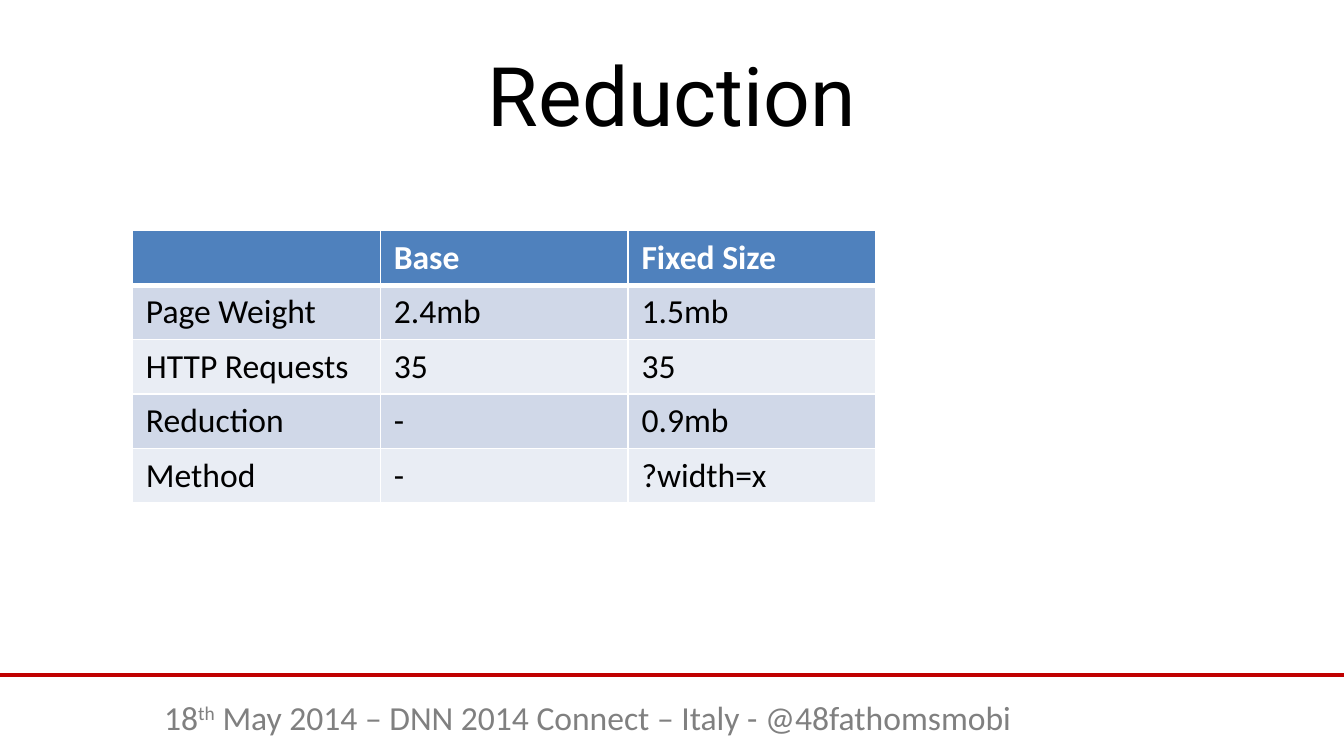
from pptx import Presentation
from pptx import util as u
from pptx.dml.color import RGBColor
from pptx.enum import shapes, text
from pptx.oxml import parse_xml
from pptx.oxml.ns import nsdecls

TITLE = "Reduction"
RESULTS = [
    ("", "Base", "Fixed Size"),
    ("Page Weight", "2.4mb", "1.5mb"),
    ("HTTP Requests", "35", "35"),
    ("Reduction", "-", "0.9mb"),
    ("Method", "-", "?width=x"),
]
FOOTER = [("18", False), ("th", True),
          (" May 2014 – DNN 2014 Connect – Italy - @48fathomsmobi", False)]

THEME = {
    "title_font": "Roboto", "body_font": "Calibri",
    "title_size": 44, "body_size": 18,
    "ink": "000000", "paper": "FFFFFF", "muted": "808080", "rule": "C00000",
    "header": "4F81BD", "bands": ("D0D8E8", "E9EDF4"),
}
SLIDE_W, SLIDE_H = 720, 405
RULE_Y = 361.5
TABLE_LEFT, TABLE_TOP = 71, 123.5
COLUMN_W, ROW_H = 132.75, 29.2


def style(font, face, size, color, bold=False):
    font.name, font.size, font.bold = face, u.Pt(size), bold
    font.color.rgb = RGBColor.from_string(color)


def add_centred_box(slide, left, top, width, height):
    """Add a wrapping text box; return its frame and centred first paragraph."""
    frame = slide.shapes.add_textbox(*map(u.Pt, (left, top, width, height))).text_frame
    frame.word_wrap = True
    line = frame.paragraphs[0]
    line.alignment = text.PP_ALIGN.CENTER
    return frame, line


def add_footer(slide):
    rule = slide.shapes.add_connector(
        shapes.MSO_CONNECTOR.STRAIGHT, 0, u.Pt(RULE_Y), u.Pt(SLIDE_W), u.Pt(RULE_Y))
    rule.line.color.rgb = RGBColor.from_string(THEME["rule"])
    rule.line.width = u.Pt(2)
    rule._element.spPr.append(parse_xml(f"<a:effectLst {nsdecls('a')}/>"))

    _, line = add_centred_box(slide, 65.5, 370, 499, 29)
    for words, raised in FOOTER:
        run = line.add_run()
        run.text = words
        style(run.font, THEME["body_font"], THEME["body_size"], THEME["muted"])
        if raised:
            run._r.get_or_add_rPr().set("baseline", "30000")


def add_title(slide):
    frame, line = add_centred_box(slide, 36, 16.5, 648, 67.5)
    frame.vertical_anchor = text.MSO_ANCHOR.MIDDLE
    line.text = TITLE
    style(line.runs[0].font, THEME["title_font"], THEME["title_size"], THEME["ink"])


def add_borders(cell, widths):
    for side, width in widths.items():
        cell._tc.get_or_add_tcPr().append(parse_xml(
            f'<a:ln{side} {nsdecls("a")} w="{u.Pt(width)}"><a:solidFill>'
            f'<a:srgbClr val="{THEME["paper"]}"/></a:solidFill></a:ln{side}>'))


def add_results(slide):
    rows, columns = len(RESULTS), len(RESULTS[0])
    table = slide.shapes.add_table(
        rows, columns, u.Pt(TABLE_LEFT), u.Pt(TABLE_TOP),
        u.Pt(COLUMN_W * columns), u.Pt(ROW_H * rows)).table
    for r, values in enumerate(RESULTS):
        heading = r == 0
        fill = THEME["header"] if heading else THEME["bands"][(r - 1) % 2]
        color = THEME["paper"] if heading else THEME["ink"]
        borders = {"L": 1, "R": 1, "T": 3 if r == 1 else 1, "B": 3 if heading else 1}
        for c, value in enumerate(values):
            cell = table.cell(r, c)
            add_borders(cell, borders)
            cell.fill.solid()
            cell.fill.fore_color.rgb = RGBColor.from_string(fill)
            cell.text = value
            style(cell.text_frame.paragraphs[0].font, THEME["body_font"],
                  THEME["body_size"], color, heading)
            for run in cell.text_frame.paragraphs[0].runs:
                style(run.font, THEME["body_font"], THEME["body_size"], color, heading)


def main():
    deck = Presentation()
    deck.slide_width, deck.slide_height = u.Pt(SLIDE_W), u.Pt(SLIDE_H)
    slide = deck.slides.add_slide(deck.slide_layouts[6])
    add_footer(slide)
    add_title(slide)
    add_results(slide)
    deck.save("out.pptx")


if __name__ == "__main__":
    main()
